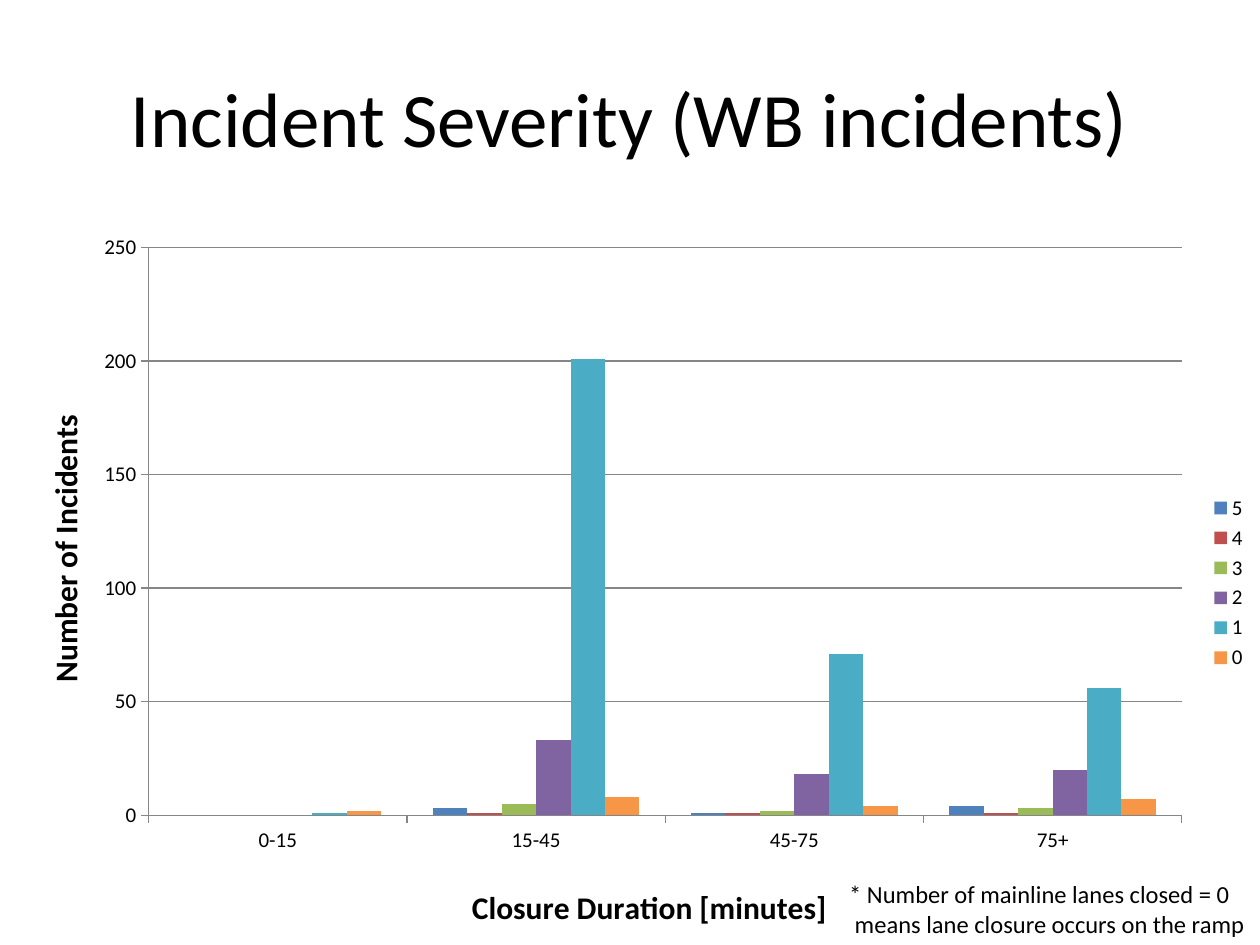
from dataclasses import dataclass
from typing import Optional

from lxml import etree
from pptx import Presentation
from pptx import util as u
from pptx.chart.data import CategoryChartData
from pptx.dml.color import RGBColor
from pptx.enum import chart as charts, text
from pptx.oxml.ns import qn


@dataclass(frozen=True)
class Theme:
    font: str = "Calibri"
    ink: str = "000000"
    rule: str = "868686"
    title_size: int = 44
    note_size: int = 14
    axis_title_size: int = 18
    label_size: int = 12


@dataclass(frozen=True)
class LaneSeries:
    lanes_closed: str
    color: str
    incidents: tuple[Optional[int], ...]


@dataclass(frozen=True)
class TextBlock:
    lines: tuple[str, ...]
    box: tuple[float, float, float, float]  # left, top, width, height in cm
    size: int
    frame_format: dict
    alignment: text.PP_ALIGN


THEME = Theme()
DURATIONS = ("0-15", "15-45", "45-75", "75+")
SERIES = (
    LaneSeries("5", "4F81BD", (None, 3, 1, 4)),
    LaneSeries("4", "C0504D", (None, 1, 1, 1)),
    LaneSeries("3", "9BBB59", (None, 5, 2, 3)),
    LaneSeries("2", "8064A2", (None, 33, 18, 20)),
    LaneSeries("1", "4BACC6", (1, 201, 71, 56)),
    LaneSeries("0", "F79646", (2, 8, 4, 7)),
)
TEXT_BLOCKS = (
    TextBlock(("Incident Severity (WB incidents)",), (1.27, 0.76, 22.86, 3.18),
              THEME.title_size,
              {"word_wrap": True, "vertical_anchor": text.MSO_ANCHOR.MIDDLE},
              text.PP_ALIGN.CENTER),
    TextBlock(("* Number of mainline lanes closed = 0",
               " means lane closure occurs on the ramp"), (16.87, 17.6, 8.53, 1.45),
              THEME.note_size,
              {"word_wrap": False, "auto_size": text.MSO_AUTO_SIZE.SHAPE_TO_FIT_TEXT},
              text.PP_ALIGN.LEFT),
)


def set_attributes(target, values: dict) -> None:
    for name, value in values.items():
        setattr(target, name, value)


def style_font(font, size: int, bold: bool = False) -> None:
    set_attributes(font, {"name": THEME.font, "size": u.Pt(size), "bold": bold})
    font.color.rgb = RGBColor.from_string(THEME.ink)


def style_line(line) -> None:
    line.color.rgb = RGBColor.from_string(THEME.rule)
    line.width = u.Pt(0.75)


def place(element, index: int, settings: dict) -> None:
    """Give a chart part a manual position, in fractions of the chart."""
    layout = element.find(qn("c:layout"))
    if layout is None:
        layout = etree.Element(qn("c:layout"))
        element.insert(index, layout)
    manual = etree.SubElement(layout, qn("c:manualLayout"))
    for tag, value in settings.items():
        etree.SubElement(manual, qn(f"c:{tag}")).set("val", str(value))


def style_axis(axis, title: str, x: float, y: float) -> None:
    frame = axis.axis_title.text_frame
    frame.text = title
    style_font(frame.paragraphs[0].runs[0].font, THEME.axis_title_size, bold=True)
    place(axis.axis_title._element, 1,
          {"xMode": "edge", "yMode": "edge", "x": x, "y": y})
    set_attributes(axis, {"major_tick_mark": charts.XL_TICK_MARK.OUTSIDE,
                          "minor_tick_mark": charts.XL_TICK_MARK.NONE})
    style_font(axis.tick_labels.font, THEME.label_size)
    style_line(axis.format.line)


def add_incident_chart(slide) -> None:
    data = CategoryChartData()
    data.categories = DURATIONS
    for series in SERIES:
        data.add_series(series.lanes_closed, series.incidents)
    chart = slide.shapes.add_chart(
        charts.XL_CHART_TYPE.COLUMN_CLUSTERED, u.Cm(0), u.Cm(4.45),
        u.Cm(25.4), u.Cm(14.6), data).chart
    set_attributes(chart, {"has_title": False, "has_legend": True})
    style_font(chart.font, THEME.label_size)

    # Columns
    plot = chart.plots[0]
    set_attributes(plot, {"gap_width": 150, "overlap": 0, "vary_by_categories": False})
    for drawn, series in zip(plot.series, SERIES):
        drawn.format.fill.solid()
        drawn.format.fill.fore_color.rgb = RGBColor.from_string(series.color)
    plot_area = chart._chartSpace.find(qn("c:chart")).find(qn("c:plotArea"))
    place(plot_area, 0, {"layoutTarget": "inner", "xMode": "edge", "yMode": "edge",
                         "x": 0.118, "y": 0.037, "w": 0.82, "h": 0.784})

    # Axes and gridlines
    style_axis(chart.category_axis, "Closure Duration [minutes]", 0.37, 0.91)
    style_axis(chart.value_axis, "Number of Incidents", 0.03, 0.26)
    set_attributes(chart.value_axis, {"minimum_scale": 0, "maximum_scale": 250,
                                      "major_unit": 50, "has_major_gridlines": True})
    style_line(chart.value_axis.major_gridlines.format.line)

    # Legend
    set_attributes(chart.legend, {"position": charts.XL_LEGEND_POSITION.RIGHT,
                                  "include_in_layout": False})
    style_font(chart.legend.font, THEME.label_size)


def add_text(slide, block: TextBlock) -> None:
    frame = slide.shapes.add_textbox(*map(u.Cm, block.box)).text_frame
    frame.text = "\n".join(block.lines)
    set_attributes(frame, block.frame_format)
    for paragraph in frame.paragraphs:
        paragraph.alignment = block.alignment
        style_font(paragraph.runs[0].font, block.size)


def main() -> None:
    presentation = Presentation()
    set_attributes(presentation, {"slide_width": u.Cm(25.4), "slide_height": u.Cm(19.05)})
    slide = presentation.slides.add_slide(presentation.slide_layouts[6])
    title, note = TEXT_BLOCKS
    add_text(slide, title)
    add_incident_chart(slide)
    add_text(slide, note)
    presentation.save("out.pptx")


if __name__ == "__main__":
    main()
